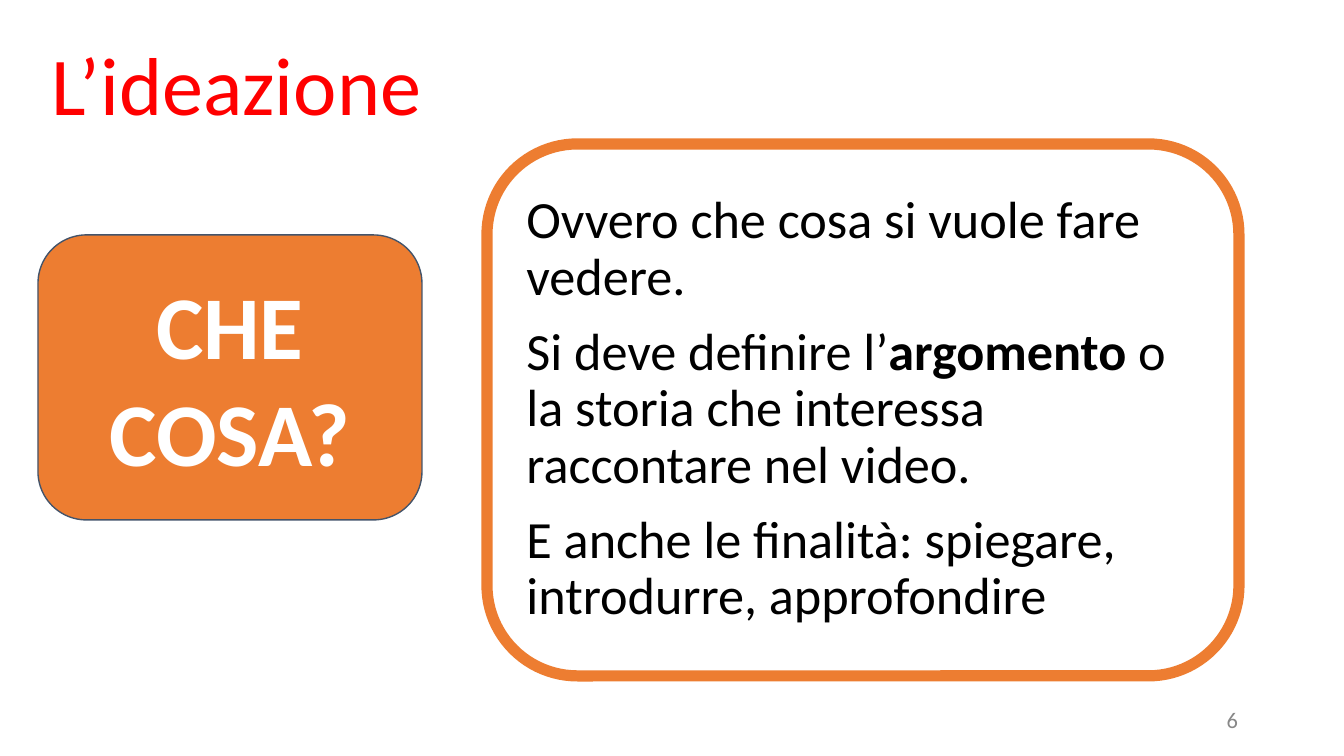
from pptx import Presentation
from pptx.dml.color import RGBColor
from pptx.enum.shapes import MSO_SHAPE
from pptx.enum.text import MSO_ANCHOR, PP_ALIGN
from pptx.util import Emu, Pt

ROUNDED = MSO_SHAPE.ROUNDED_RECTANGLE
MIDDLE = MSO_ANCHOR.MIDDLE
LEFT, CENTER, RIGHT = PP_ALIGN.LEFT, PP_ALIGN.CENTER, PP_ALIGN.RIGHT

FONT = "Calibri"
RED = RGBColor(0xFF, 0x00, 0x00)
ORANGE = RGBColor(0xED, 0x7D, 0x31)
SLATE = RGBColor(0x44, 0x54, 0x6A)
GREY = RGBColor(0x88, 0x88, 0x88)
WHITE = RGBColor(0xFF, 0xFF, 0xFF)
BLACK = RGBColor(0x00, 0x00, 0x00)

PX_PER_INCH = 134.4


def px(n):
    return Emu(round(n * 914400 / PX_PER_INCH))


def write(sp, paragraphs, size, color, align=LEFT, spacing=None, before=0, inset=13):
    """Fill a shape with paragraphs, each a list of (text, bold) runs."""
    tf = sp.text_frame
    tf.word_wrap = True
    tf.vertical_anchor = MIDDLE
    tf.margin_left = tf.margin_right = px(13)
    tf.margin_top = tf.margin_bottom = px(inset)
    for i, runs in enumerate(paragraphs):
        p = tf.paragraphs[0] if i == 0 else tf.add_paragraph()
        p.alignment = align
        p.space_before = Pt(before)
        if spacing:
            p.line_spacing = spacing
        for text, bold in runs:
            r = p.add_run()
            r.text = text
            r.font.name = FONT
            r.font.size = Pt(size)
            r.font.bold = bold
            r.font.color.rgb = color


def add_label(s, box, text, size, color, **style):
    sp = s.shapes.add_textbox(*map(px, box))
    write(sp, [[(text, False)]], size, color, inset=7, **style)


def add_rounded_box(s, box, line, line_width, fill=None):
    sp = s.shapes.add_shape(ROUNDED, *map(px, box))
    sp.shadow.inherit = False
    sp.adjustments[0] = 0.17
    if fill is None:
        sp.fill.background()
    else:
        sp.fill.solid()
        sp.fill.fore_color.rgb = fill
    sp.line.color.rgb = line
    sp.line.width = Pt(line_width)
    return sp


def main():
    prs = Presentation()
    prs.slide_width, prs.slide_height = px(1344), px(756)
    s = prs.slides.add_slide(prs.slide_layouts[6])

    # Title and slide number
    add_label(s, (38, 16, 1158, 146), "L’ideazione", 44, RED, spacing=0.9)
    add_label(s, (949, 700, 302, 40), "6", 12, GREY, align=RIGHT)

    # Question
    question = add_rounded_box(s, (38, 235, 384, 285), SLATE, 0.75, ORANGE)
    write(question, [[("CHE COSA?", True)]], 48, WHITE, align=CENTER)

    # Answer
    answer = add_rounded_box(s, (487, 144, 752, 532), ORANGE, 6)
    write(answer, [
        [("Ovvero che cosa si vuole fare vedere.", False)],
        [("Si deve definire l’", False), ("argomento", True),
         (" o la storia che interessa raccontare nel video.", False)],
        [("E anche le finalità: spiegare, introdurre, approfondire", False)],
    ], 28, BLACK, spacing=0.9, before=10)

    prs.save("out.pptx")


if __name__ == "__main__":
    main()
